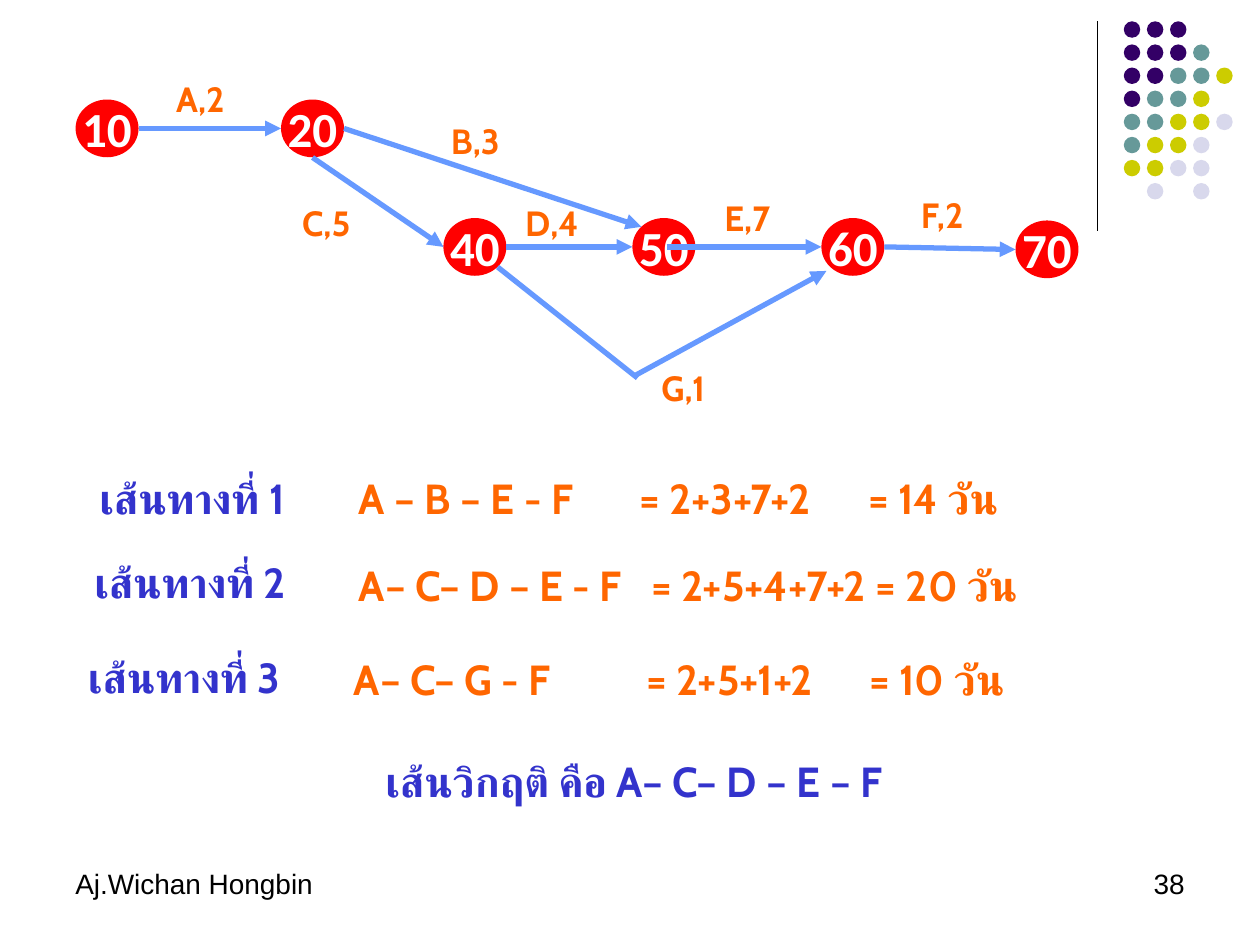
"""Builds a critical path slide with a project network and its three routes."""
from lxml import etree
from pptx import Presentation
from pptx.dml.color import RGBColor
from pptx.enum import shapes, text
from pptx.oxml import ns
from pptx.util import Pt

BLACK = RGBColor(0x00, 0x00, 0x00)
WHITE = RGBColor(0xFF, 0xFF, 0xFF)
RED = RGBColor(0xFF, 0x00, 0x00)
ORANGE = RGBColor(0xFF, 0x66, 0x00)
INDIGO = RGBColor(0x33, 0x33, 0xCC)
SKY = RGBColor(0x66, 0x99, 0xFF)
PURPLE = RGBColor(0x33, 0x00, 0x66)
TEAL = RGBColor(0x66, 0x99, 0x99)
OLIVE = RGBColor(0xCC, 0xCC, 0x00)
LAVENDER = RGBColor(0xD8, 0xD8, 0xEC)

NODE_FONT = {"name": "Calibri", "size": Pt(28), "bold": True}
LABEL_FONT = {"name": "Cabin", "size": Pt(20), "bold": True}
ROUTE_FONT = {"name": "Cabin", "size": Pt(24), "bold": True}
FOOTER_FONT = {"name": "Arial", "size": Pt(16), "bold": False}

DOT_COLOURS = {"P": PURPLE, "T": TEAL, "O": OLIVE, "L": LAVENDER}
DOT_ROWS = ["PPP", "PPPT", "PPTTO", "PTTO", "TTOOL", "TOOL", "OOLL", ".L.L"]
NODES = [("10", 43.2, 56.9), ("20", 160.6, 56.9), ("40", 253.4, 124.6),
         ("50", 361.4, 124.6), ("60", 469.4, 124.6), ("70", 580.3, 126)]
ARROWS = [(79.2, 73.4, 160.6, 73.4), (196.6, 73.4, 366.5, 129.6),
          (178.6, 90, 253.4, 141.1), (289.4, 141.1, 361.4, 141.1),
          (380.9, 141.1, 469.4, 141.1), (505.4, 141.1, 580.3, 142.6),
          (362.9, 214.6, 472.3, 154.8)]
ACTIVITIES = [("A,2", 93.6, 41), ("B,3", 250.6, 64.8), ("C,5", 165.6, 111.6),
              ("D,4", 293, 111.6), ("E,7", 406.8, 108.7), ("G,1", 370.8, 205.9),
              ("F,2", 519.1, 107.3)]
ROUTES = [
    ("เส้นทางที่ 1", 49.7, 266.4, "A – B – E - F\t= 2+3+7+2\t= 14 วัน", 198, 266.4, (160.5, 291)),
    ("เส้นทางที่ 2", 46.8, 314.6, "A– C– D – E - F\t= 2+5+4+7+2 = 20 วัน", 198, 316.1, (167,)),
    ("เส้นทางที่ 3", 43.2, 368.6, "A– C– G - F\t= 2+5+1+2\t= 10 วัน", 195.1, 370.1, (167, 294.5)),
]


class NetworkSlide:
    """Holds the current slide and draws each kind of element in points."""

    def __init__(self, slide):
        self.slide = slide

    def fill_text(self, frame, words, font, colour, align=text.PP_ALIGN.LEFT):
        """Fills a text frame with one formatted paragraph."""
        paragraph = frame.paragraphs[0]
        paragraph.alignment = align
        run = paragraph.add_run()
        run.text = words
        for key, value in font.items():
            setattr(run.font, key, value)
        run.font.color.rgb = colour
        complex_script = etree.SubElement(run.font._element, ns.qn("a:cs"))
        complex_script.set("typeface", font["name"])
        return paragraph

    def label(self, words, left, top, width, height, font, colour,
              align=text.PP_ALIGN.LEFT, wrap=True, tabs=()):
        """Adds a text box with optional tab stops."""
        frame = self.slide.shapes.add_textbox(
            Pt(left), Pt(top), Pt(width), Pt(height)).text_frame
        frame.word_wrap = wrap
        paragraph = self.fill_text(frame, words, font, colour, align)
        if tabs:
            stops = etree.SubElement(paragraph._p.get_or_add_pPr(), ns.qn("a:tabLst"))
            for stop in tabs:
                etree.SubElement(stops, ns.qn("a:tab"), pos=str(int(Pt(stop))), algn="l")

    def oval(self, left, top, width, height, colour):
        """Adds a flat ellipse."""
        oval = self.slide.shapes.add_shape(
            shapes.MSO_SHAPE.OVAL, Pt(left), Pt(top), Pt(width), Pt(height))
        oval.shadow.inherit = False
        oval.fill.solid()
        oval.fill.fore_color.rgb = colour
        oval.line.fill.background()
        return oval

    def node(self, number, left, top):
        """Adds a numbered event."""
        frame = self.oval(left, top, 36, 33, RED).text_frame
        frame.word_wrap = False
        frame.vertical_anchor = text.MSO_ANCHOR.MIDDLE
        self.fill_text(frame, number, NODE_FONT, WHITE, text.PP_ALIGN.CENTER)

    def line(self, ends, colour, weight, arrow=False):
        """Adds a straight line, with an arrowhead if asked."""
        line = self.slide.shapes.add_connector(
            shapes.MSO_CONNECTOR.STRAIGHT, *(Pt(end) for end in ends))
        line.line.color.rgb = colour
        line.line.width = Pt(weight)
        if arrow:
            etree.SubElement(line.line._get_or_add_ln(), ns.qn("a:tailEnd"), type="triangle")
        etree.SubElement(line._element.spPr, ns.qn("a:effectLst"))

    def dots(self, left, top, pitch, size):
        """Adds the corner pattern of coloured dots."""
        for row, codes in enumerate(DOT_ROWS):
            for column, code in enumerate(codes):
                if code in DOT_COLOURS:
                    self.oval(left + column * pitch, top + row * pitch,
                              size, size, DOT_COLOURS[code])


def main():
    """Builds and saves the slide."""
    deck = Presentation()
    deck.slide_width, deck.slide_height = Pt(720), Pt(540)
    network = NetworkSlide(deck.slides.add_slide(deck.slide_layouts[6]))

    network.line((627.1, 12.2, 627.1, 131.8), BLACK, 0.75)
    network.dots(642.2, 12.2, 13.2, 9.4)
    network.label("Aj.Wichan Hongbin", 36, 491.8, 168, 36, FOOTER_FONT, BLACK)
    network.label("38", 516, 491.8, 168, 36, FOOTER_FONT, BLACK, text.PP_ALIGN.RIGHT)

    for number, left, top in NODES:
        network.node(number, left, top)
    network.line((284.4, 152.6, 364.3, 216), SKY, 3)
    for ends in ARROWS:
        network.line(ends, SKY, 3, arrow=True)
    for activity, left, top in ACTIVITIES:
        network.label(activity, left, top, 47, 31, LABEL_FONT, ORANGE, wrap=False)

    for name, name_left, name_top, route, left, top, tabs in ROUTES:
        network.label(name, name_left, name_top, 149, 36, ROUTE_FONT, INDIGO)
        network.label(route, left, top, 500, 36, ROUTE_FONT, ORANGE, tabs=tabs)
    network.label("เส้นวิกฤติ คือ A– C– D – E – F", 213.1, 428.4, 353, 36,
                  ROUTE_FONT, INDIGO)
    deck.save("out.pptx")


if __name__ == "__main__":
    main()
